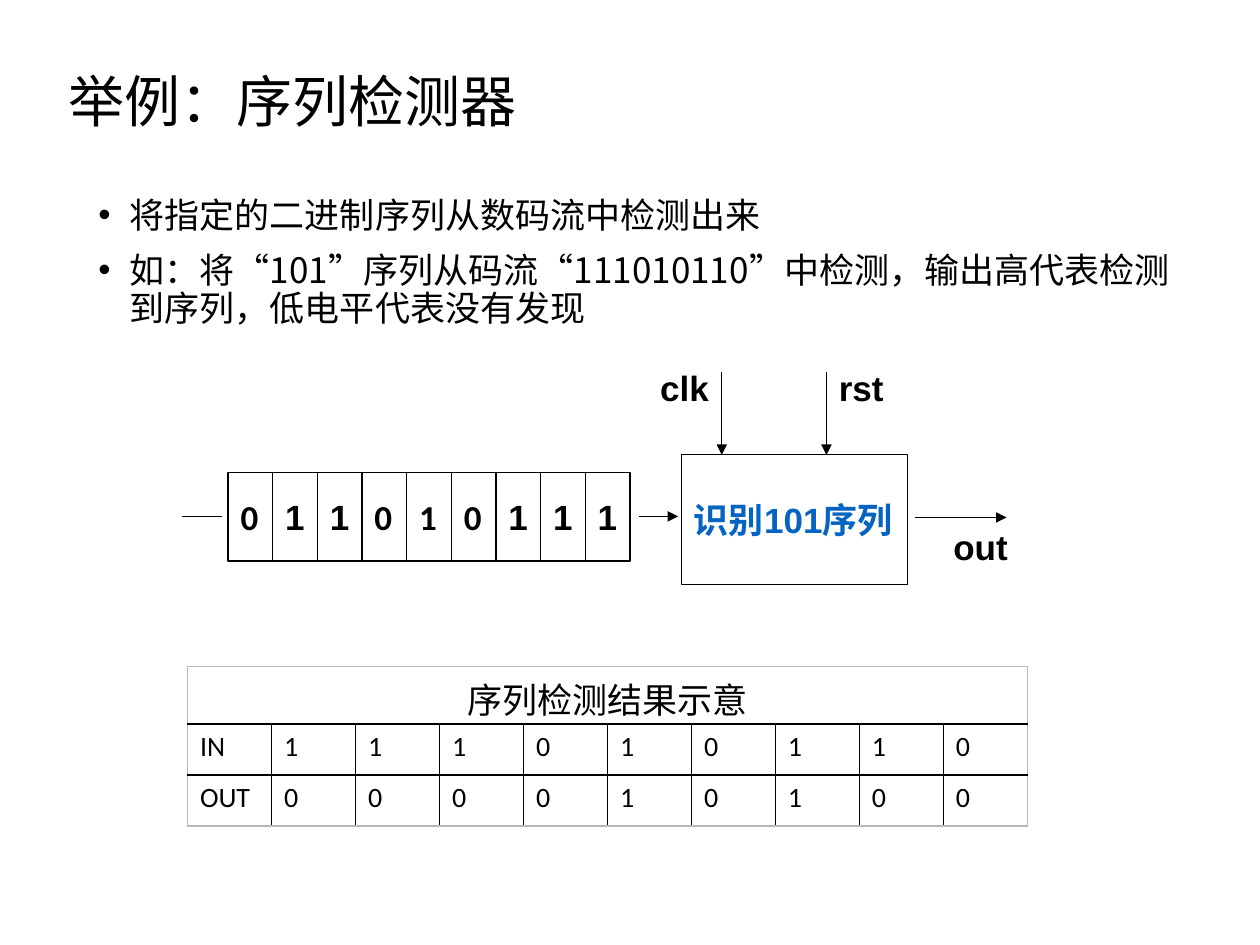
"""Build the sequence detector slide: bullets, block diagram and result table."""
from lxml import etree
from pptx import Presentation
from pptx.dml.color import RGBColor
from pptx.enum.shapes import MSO_CONNECTOR, MSO_SHAPE
from pptx.enum.text import MSO_ANCHOR, MSO_AUTO_SIZE, PP_ALIGN
from pptx.oxml.ns import qn
from pptx.util import Cm, Pt

STRAIGHT = MSO_CONNECTOR.STRAIGHT
RECTANGLE = MSO_SHAPE.RECTANGLE
TOP, MIDDLE = MSO_ANCHOR.TOP, MSO_ANCHOR.MIDDLE
LEFT, CENTER = PP_ALIGN.LEFT, PP_ALIGN.CENTER
NO_AUTOFIT = MSO_AUTO_SIZE.NONE

COLORS = {"ink": "000000", "paper": "FFFFFF", "accent": "0563C1", "frame": "B8B8B8"}
LATIN, LABEL, CHINESE = "Calibri", "Arial", "Noto Sans CJK SC"
LINE_WIDTH = Pt(0.75)

BULLETS = [
    "将指定的二进制序列从数码流中检测出来",
    "如：将“101”序列从码流“111010110”中检测，输出高代表检测到序列，低电平代表没有发现",
]
STREAM = "011010111"
CALIBRI_BITS = {0, 3, 4, 5}
ARROWS = [
    (3.66, 10.41, 4.47, 10.41, False),
    (12.88, 10.41, 13.67, 10.41, True),
    (18.44, 10.43, 20.29, 10.43, True),
    (14.55, 7.49, 14.55, 9.17, True),
    (16.66, 7.49, 16.66, 9.17, True),
]
LABELS = [("clk", 13.06, 7.26, 1.58), ("rst", 16.66, 7.26, 1.6), ("out", 18.97, 10.46, 2.16)]
RESULTS = [("IN", "111010110"), ("OUT", "000010100")]


def color(name):
    """Return the named colour as an RGB value."""
    return RGBColor.from_string(COLORS[name])


def add_span(para, text, font=LATIN, size=20, bold=False, ink="ink"):
    """Add a formatted run with matching Latin and Chinese fonts."""
    span = para.add_run()
    span.text = text
    for key, value in {"name": font, "size": Pt(size), "bold": bold}.items():
        setattr(span.font, key, value)
    span.font.color.rgb = color(ink)
    etree.SubElement(span.font._element, qn("a:ea"), typeface=CHINESE)


def place(shape, *bounds):
    """Move and size a shape in centimetres."""
    for key, value in zip(("left", "top", "width", "height"), bounds):
        setattr(shape, key, Cm(value))


def format_frame(frame, anchor, wrap=True):
    """Set anchoring and wrapping of a text frame."""
    settings = {"vertical_anchor": anchor, "word_wrap": wrap, "auto_size": NO_AUTOFIT}
    for key, value in settings.items():
        setattr(frame, key, value)


def fill_title(page):
    """Fill the title placeholder."""
    title = page.shapes.title
    place(title, 1.12, 1.02, 21.89, 2.16)
    format_frame(title.text_frame, MIDDLE)
    para = title.text_frame.paragraphs[0]
    para.alignment, para.line_spacing = LEFT, 0.9
    add_span(para, "举例：序列检测器", size=32)


def fill_body(page):
    """Fill the body placeholder with the bullets."""
    body = page.placeholders[1]
    place(body, 1.73, 3.86, 22.23, 3.4)
    format_frame(body.text_frame, TOP)
    for index, text in enumerate(BULLETS):
        para = body.text_frame.paragraphs[0] if index == 0 else body.text_frame.add_paragraph()
        properties = para._p.get_or_add_pPr()
        properties.set("marL", str(Cm(0.63)))
        properties.set("indent", str(Cm(-0.63)))
        para.line_spacing = 0.9
        para.space_before = Pt(10 if index else 0)
        etree.SubElement(properties, qn("a:buFont"), typeface=LABEL)
        etree.SubElement(properties, qn("a:buChar"), char="•")
        add_span(para, text, CHINESE)


def add_block(page, bounds, spans, ink="ink"):
    """Add an outlined rectangle with bold text given as (text, font) pairs."""
    block = page.shapes.add_shape(RECTANGLE, *map(Cm, bounds))
    block.shadow.inherit = False
    block.fill.solid()
    block.fill.fore_color.rgb = color("paper")
    block.line.color.rgb = color("ink")
    block.line.width = LINE_WIDTH
    format_frame(block.text_frame, MIDDLE, wrap=False)
    para = block.text_frame.paragraphs[0]
    para.alignment = LEFT
    for text, font in spans:
        add_span(para, text, font, bold=True, ink=ink)


def add_wire(page, start_x, start_y, end_x, end_y, arrow):
    """Add a signal line, with an arrowhead at its end if asked."""
    wire = page.shapes.add_connector(STRAIGHT, *map(Cm, (start_x, start_y, end_x, end_y)))
    wire.line.color.rgb = color("ink")
    wire.line.width = LINE_WIDTH
    if arrow:
        etree.SubElement(wire.line._get_or_add_ln(), qn("a:tailEnd"), type="triangle")
    etree.SubElement(wire._element.spPr, qn("a:effectLst"))


def add_label(page, text, left, top, width):
    """Add a bold signal name."""
    box = page.shapes.add_textbox(Cm(left), Cm(top), Cm(width), Cm(1.35))
    format_frame(box.text_frame, TOP)
    add_span(box.text_frame.paragraphs[0], text, LABEL, bold=True)


def set_borders(cell, outer_sides):
    """Draw the cell borders, grey on the outer sides of the table."""
    properties = cell._tc.get_or_add_tcPr()
    for side in "LRTB":
        line = etree.SubElement(properties, qn(f"a:ln{side}"), w=str(Pt(1)))
        fill = etree.SubElement(line, qn("a:solidFill"))
        name = "frame" if side in outer_sides else "ink"
        etree.SubElement(fill, qn("a:srgbClr"), val=COLORS[name])


def add_results(page):
    """Add the table of input and output bits."""
    column_count, heights = 10, (1.09, 1.03, 1.03)
    bounds = map(Cm, (3.78, 13.44, 16.93, sum(heights)))
    table = page.shapes.add_table(len(heights), column_count, *bounds).table
    table.first_row = table.horz_banding = False
    for row, height in zip(table.rows, heights):
        row.height = Cm(height)
    for column in table.columns:
        column.width = Cm(16.93 / column_count)
    for row_index in range(len(heights)):
        for column_index in range(column_count):
            cell = table.cell(row_index, column_index)
            edges = {"L": column_index == 0, "R": column_index == column_count - 1 or row_index == 0,
                     "T": row_index == 0, "B": row_index == len(heights) - 1}
            set_borders(cell, [side for side, is_outer in edges.items() if is_outer])
            cell.fill.background()
    heading = table.cell(0, 0)
    heading.merge(table.cell(0, column_count - 1))
    heading.margin_bottom = 0
    para = heading.text_frame.paragraphs[0]
    para.alignment = CENTER
    add_span(para, "序列检测结果示意")
    for row_index, (name, bits) in enumerate(RESULTS, start=1):
        for column_index, text in enumerate([name, *bits]):
            para = table.cell(row_index, column_index).text_frame.paragraphs[0]
            add_span(para, text, size=16)


def main():
    """Build and save the deck."""
    deck = Presentation()
    deck.slide_width, deck.slide_height = Cm(25.4), Cm(19.05)
    page = deck.slides.add_slide(deck.slide_layouts[1])
    fill_title(page)
    fill_body(page)
    for index, bit in enumerate(STREAM):
        font = LATIN if index in CALIBRI_BITS else LABEL
        add_block(page, (4.6 + 0.9 * index, 9.53, 0.9, 1.78), [(bit, font)])
    detector_spans = [("识别", CHINESE), ("101", LABEL), ("序列", CHINESE)]
    add_block(page, (13.74, 9.17, 4.55, 2.62), detector_spans, "accent")
    for arrow in ARROWS:
        add_wire(page, *arrow)
    for label in LABELS:
        add_label(page, *label)
    add_results(page)
    deck.save("out.pptx")


if __name__ == "__main__":
    main()
